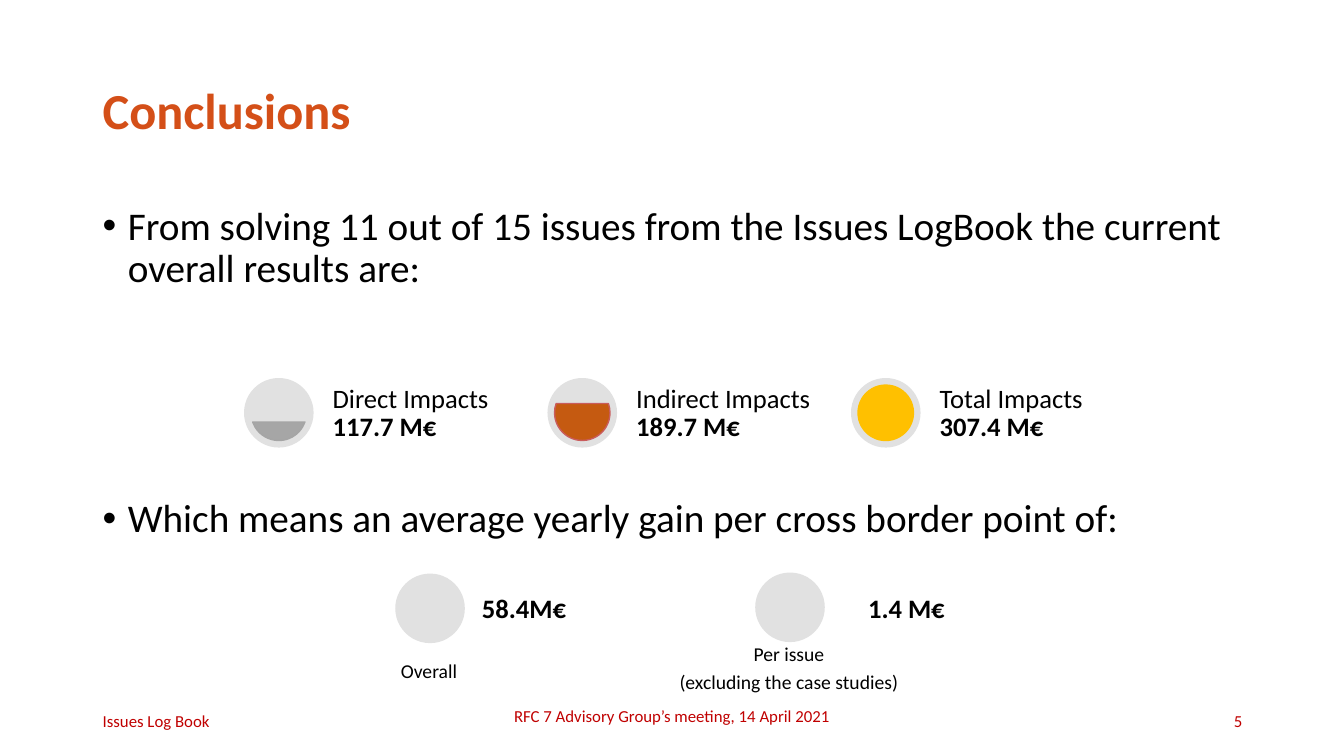
from pptx import Presentation
from pptx.dml.color import RGBColor
from pptx.enum.shapes import MSO_SHAPE
from pptx.enum.text import MSO_ANCHOR, PP_ALIGN
from pptx.util import Inches, Pt
from lxml import etree

LEFT, CENTER, RIGHT = PP_ALIGN.LEFT, PP_ALIGN.CENTER, PP_ALIGN.RIGHT
TOP, MIDDLE, BOTTOM = MSO_ANCHOR.TOP, MSO_ANCHOR.MIDDLE, MSO_ANCHOR.BOTTOM
ELLIPSE, CHORD = MSO_SHAPE.OVAL, MSO_SHAPE.CHORD

COLORS = {
    "title": "D44F18", "text": "000000", "footer": "C00000", "disc": "E1E1E1",
    "direct": "A6A6A6", "direct_edge": "A5A5A5",
    "indirect": "C55A11", "indirect_edge": "C95C5C", "total": "FFC000",
}

TITLE = "Conclusions"
STATEMENTS = [
    ("From solving 11 out of 15 issues from the Issues LogBook the current overall results are:", 2, 1.35),
    ("Which means an average yearly gain per cross border point of:", 4.9, 0.75),
]
IMPACTS = [
    ("Direct Impacts ", "117.7 M€", (11.683, 96.317), "direct", "direct_edge"),
    ("Indirect Impacts ", "189.7 M€", (204.317, 119.683), "indirect", "indirect_edge"),
    ("Total Impacts ", "307.4 M€", (162, 162), "total", "total"),
]
GAINS = [
    ("58.4M€", 4.73, (3.92, 5.69), ["Overall"], (3.74, 6.47, 1.03, 0.35)),
    ("1.4 M€", 8.56, (7.49, 5.68), ["Per issue", "(excluding the case studies)"], (6.08, 6.58, 3.49, 0.35)),
]
FOOTERS = [
    ("Issues Log Book", (0.92, 6.95, 3, 0.4), LEFT),
    ("5", (9.42, 6.95, 3, 0.4), RIGHT),
    ("RFC 7 Advisory Group’s meeting, 14 April 2021", (2.96, 6.9, 7.41, 0.4), CENTER),
]

WIDTH, HEIGHT = 13.33, 7.5
MARGIN, BODY_WIDTH = 0.92, 11.5
DISC, RIM = 0.69, 0.07
IMPACT_LEFT, IMPACT_TOP, IMPACT_STEP = 2.42, 3.75, 3.01
LABEL_OFFSET, LABEL_WIDTH = 0.83, 2.03
GAIN_TOP, GAIN_WIDTH = 5.55, 1.03

deck = Presentation()
deck.slide_width, deck.slide_height = Inches(WIDTH), Inches(HEIGHT)
slide = deck.slides.add_slide(deck.slide_layouts[6])


def rgb(name):
    return RGBColor.from_string(COLORS[name])


def add_text(paragraphs, box, size, color="text", bold=False, align=LEFT,
             anchor=TOP, inset=0.1, spacing=0.9, gap=0, bullet=False):
    frame = slide.shapes.add_textbox(*map(Inches, box)).text_frame
    frame.word_wrap = True
    frame.vertical_anchor = anchor
    frame.margin_left = frame.margin_right = Inches(inset)
    frame.margin_top = frame.margin_bottom = Inches(0.05)
    for index, runs in enumerate(paragraphs):
        paragraph = frame.add_paragraph() if index else frame.paragraphs[0]
        paragraph.alignment = align
        paragraph.line_spacing = spacing
        if index < len(paragraphs) - 1:
            paragraph.space_after = Pt(gap)
        if bullet:
            properties = paragraph._p.get_or_add_pPr()
            properties.set("marL", str(Inches(0.25)))
            properties.set("indent", str(Inches(-0.25)))
            namespace = properties.nsmap["a"]
            etree.SubElement(properties, f"{{{namespace}}}buFont", typeface="Arial")
            etree.SubElement(properties, f"{{{namespace}}}buChar", char="•")
        for words, strong in [(runs, bold)] if isinstance(runs, str) else runs:
            run = paragraph.add_run()
            run.text = words
            run.font.name = "Calibri"
            run.font.size = Pt(size)
            run.font.bold = strong
            run.font.color.rgb = rgb(color)


def add_round(kind, left, top, size, fill, edge=None):
    shape = slide.shapes.add_shape(kind, *map(Inches, (left, top, size, size)))
    shape.shadow.inherit = False
    shape.fill.solid()
    shape.fill.fore_color.rgb = rgb(fill)
    if edge:
        shape.line.color.rgb = rgb(edge)
        shape.line.width = Pt(1)
    else:
        shape.line.fill.background()
    return shape


add_text([TITLE], (MARGIN, 0.4, BODY_WIDTH, 1.45), 36, color="title", bold=True, anchor=MIDDLE)

for statement, top, height in STATEMENTS:
    add_text([statement], (MARGIN, top, BODY_WIDTH, height), 28, bullet=True)

for column, (impact, amount, angles, fill, edge) in enumerate(IMPACTS):
    left = IMPACT_LEFT + column * IMPACT_STEP
    add_round(ELLIPSE, left, IMPACT_TOP, DISC, "disc")
    level = add_round(CHORD, left + RIM, IMPACT_TOP + RIM, DISC - 2 * RIM, fill, edge)
    level.adjustments[0], level.adjustments[1] = angles
    add_text([[(impact, False), (amount, True)]],
             (left + LABEL_OFFSET, IMPACT_TOP, LABEL_WIDTH, DISC), 19, anchor=BOTTOM, inset=0.05)

for amount, amount_left, disc_corner, caption, caption_box in GAINS:
    add_round(ELLIPSE, *disc_corner, DISC, "disc")
    add_text([amount], (amount_left, GAIN_TOP, GAIN_WIDTH, DISC), 19,
             bold=True, anchor=BOTTOM, inset=0.05)
    add_text(caption, caption_box, 14, align=CENTER, anchor=BOTTOM, inset=0.05, gap=5)

for note, box, align in FOOTERS:
    add_text([note], box, 12, color="footer", align=align, anchor=MIDDLE, spacing=1.0)

deck.save("out.pptx")
